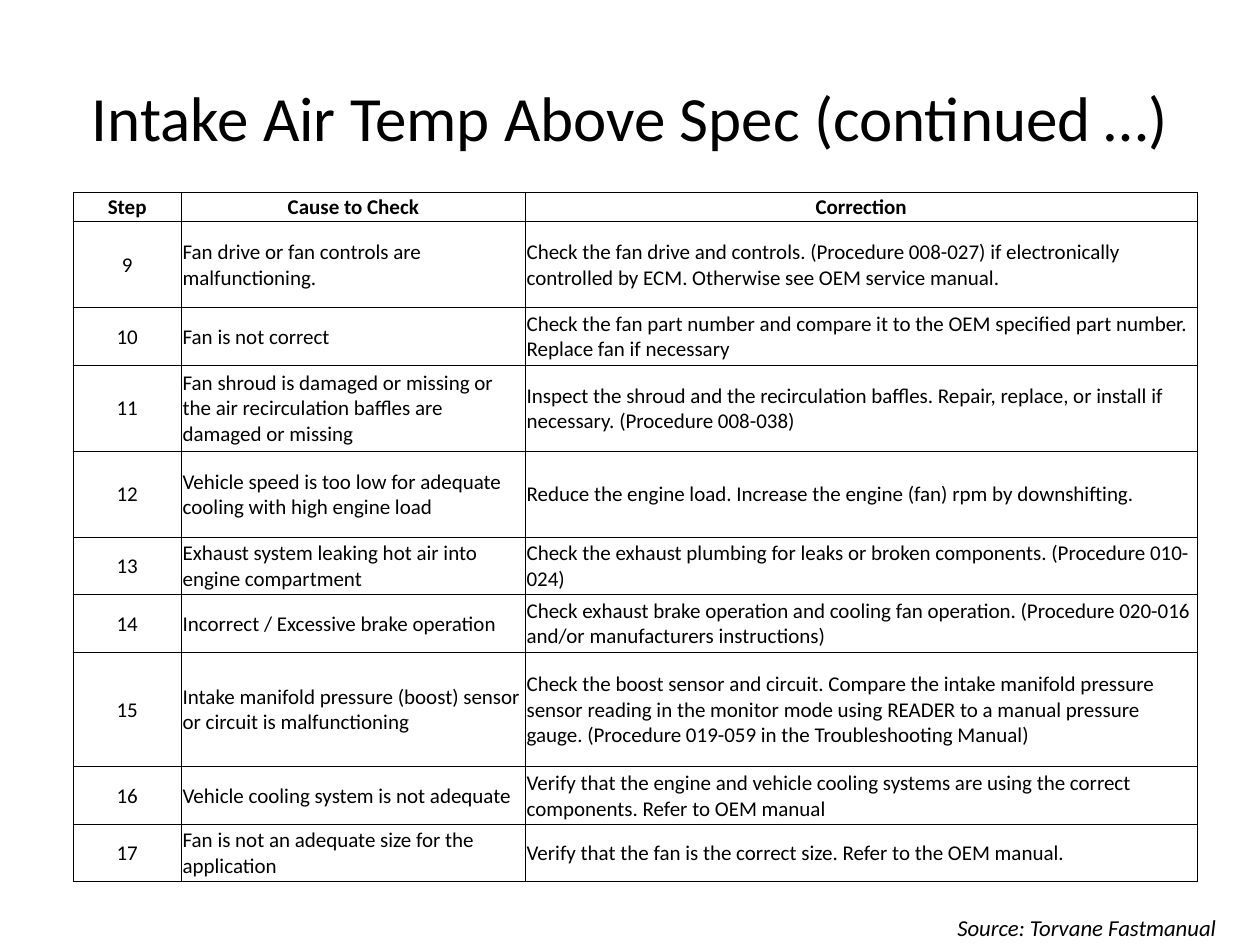
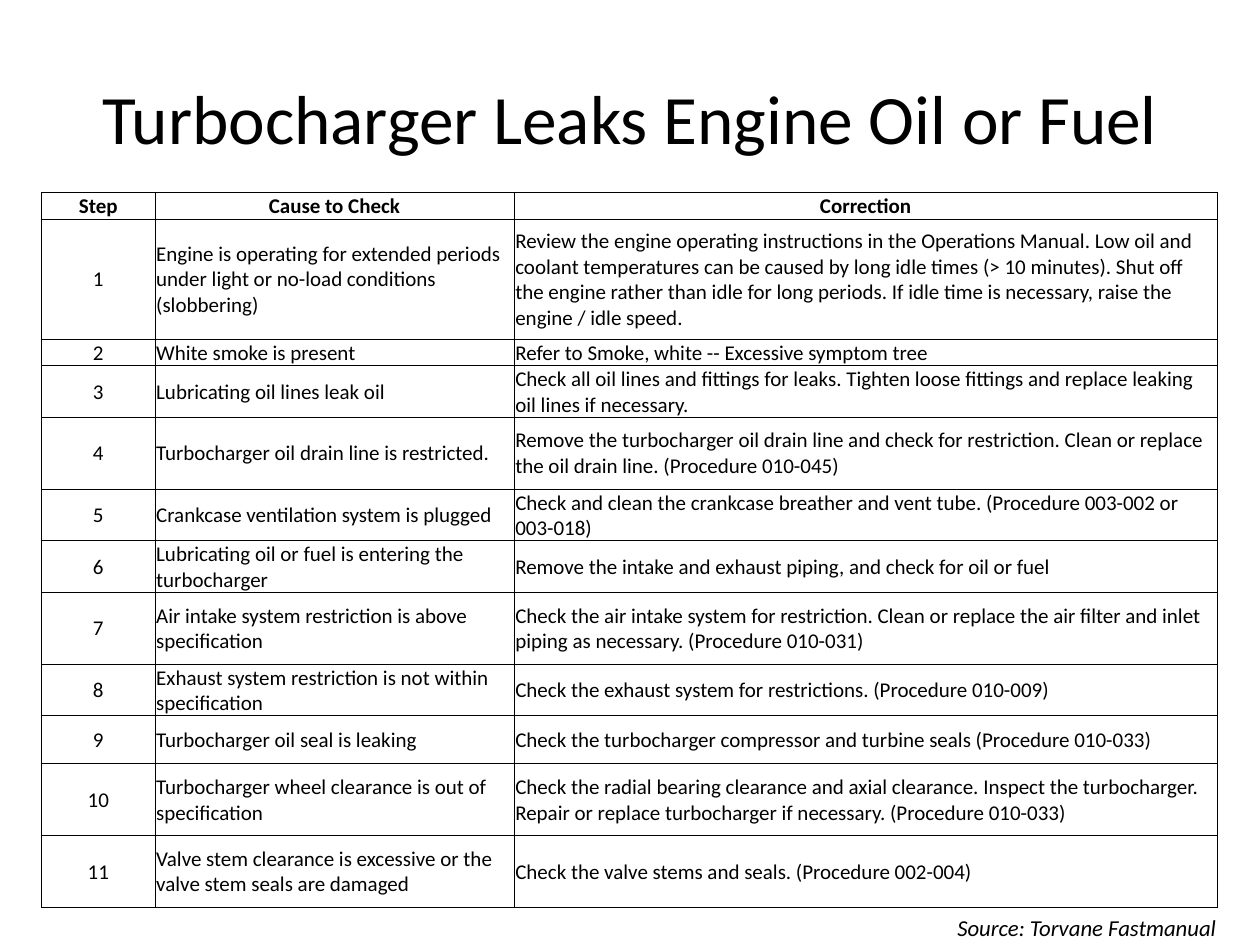
"""Build two engine troubleshooting slides, each with a step, cause and correction table."""
from lxml.etree import SubElement
from pptx import Presentation
from pptx.dml.color import RGBColor
from pptx.enum.text import MSO_ANCHOR as Anchor, MSO_AUTO_SIZE as AutoSize, PP_ALIGN as Align
from pptx.oxml.ns import qn
from pptx.util import Inches, Pt

BLACK = RGBColor(0, 0, 0)
WHITE = RGBColor(255, 255, 255)
FONT = "Calibri"
SOURCE = "Source: Torvane Fastmanual"
HEADER = ("Step", "Cause to Check", "Correction")

INTAKE_ROWS = [
    (3, "Fan drive or fan controls are malfunctioning.",
     "Check the fan drive and controls. (Procedure 008-027) if electronically "
     "controlled by ECM. Otherwise see OEM service manual."),
    (2, "Fan is not correct",
     "Check the fan part number and compare it to the OEM specified part number. "
     "Replace fan if necessary"),
    (3, "Fan shroud is damaged or missing or the air recirculation baffles are "
     "damaged or missing",
     "Inspect the shroud and the recirculation baffles. Repair, replace, or install "
     "if necessary. (Procedure 008-038)"),
    (3, "Vehicle speed is too low for adequate cooling with high engine load",
     "Reduce the engine load. Increase the engine (fan) rpm by downshifting."),
    (2, "Exhaust system leaking hot air into engine compartment",
     "Check the exhaust plumbing for leaks or broken components. (Procedure 010-024)"),
    (2, "Incorrect / Excessive brake operation",
     "Check exhaust brake operation and cooling fan operation. (Procedure 020-016 "
     "and/or manufacturers instructions)"),
    (4, "Intake manifold pressure (boost) sensor or circuit is malfunctioning",
     "Check the boost sensor and circuit. Compare the intake manifold pressure sensor "
     "reading in the monitor mode using READER to a manual pressure gauge. "
     "(Procedure 019-059 in the Troubleshooting Manual)"),
    (2, "Vehicle cooling system is not adequate",
     "Verify that the engine and vehicle cooling systems are using the correct "
     "components. Refer to OEM manual"),
    (2, "Fan is not an adequate size for the application",
     "Verify that the fan is the correct size. Refer to the OEM manual."),
]

TURBO_ROWS = [
    (5, "Engine is operating for extended periods under light or no-load conditions "
     "(slobbering)",
     "Review the engine operating instructions in the Operations Manual. Low oil and "
     "coolant temperatures can be caused by long idle times (> 10 minutes). Shut off "
     "the engine rather than idle for long periods. If idle time is necessary, raise "
     "the engine / idle speed."),
    (1, "White smoke is present", "Refer to Smoke, white -- Excessive symptom tree"),
    (2, "Lubricating oil lines leak oil",
     "Check all oil lines and fittings for leaks. Tighten loose fittings and replace "
     "leaking oil lines if necessary."),
    (3, "Turbocharger oil drain line is restricted.",
     "Remove the turbocharger oil drain line and check for restriction. Clean or "
     "replace the oil drain line. (Procedure 010-045)"),
    (2, "Crankcase ventilation system is plugged",
     "Check and clean the crankcase breather and vent tube. (Procedure 003-002 or "
     "003-018)"),
    (2, "Lubricating oil or fuel is entering the turbocharger",
     "Remove the intake and exhaust piping, and check for oil or fuel"),
    (3, "Air intake system restriction is above specification",
     "Check the air intake system for restriction. Clean or replace the air filter and "
     "inlet piping as necessary. (Procedure 010-031)"),
    (2, "Exhaust system restriction is not within specification",
     "Check the exhaust system for restrictions. (Procedure 010-009)"),
    (2, "Turbocharger oil seal is leaking",
     "Check the turbocharger compressor and turbine seals (Procedure 010-033)"),
    (3, "Turbocharger wheel clearance is out of specification",
     "Check the radial bearing clearance and axial clearance. Inspect the turbocharger. "
     "Repair or replace turbocharger if necessary. (Procedure 010-033)"),
    (3, "Valve stem clearance is excessive or the valve stem seals are damaged",
     "Check the valve stems and seals. (Procedure 002-004)"),
]


class SlideBuilder:
    def __init__(self, deck):
        self.deck = deck
        self.slide = None

    def new_slide(self):
        self.slide = self.deck.slides.add_slide(self.deck.slide_layouts[5])
        fill = self.slide.background.fill
        fill.solid()
        fill.fore_color.rgb = WHITE

    def set_text(self, frame, text, size, align=Align.LEFT, bold=False, italic=False):
        frame.text = text
        frame.word_wrap = True
        para = frame.paragraphs[0]
        para.alignment = align
        font = para.runs[0].font
        font.name, font.size, font.color.rgb = FONT, Pt(size), BLACK
        font.bold, font.italic = bold, italic

    def title(self, text, size):
        box = self.slide.shapes.title
        box.left, box.top, box.width, box.height = map(Inches, (0.5, 0.3, 9, 1.25))
        self.set_text(box.text_frame, text, size, Align.CENTER)
        box.text_frame.vertical_anchor = Anchor.MIDDLE

    def source(self):
        box = self.slide.shapes.add_textbox(*map(Inches, (7.5, 7.2, 2.5, 0.32)))
        self.set_text(box.text_frame, SOURCE, 13, italic=True)
        box.text_frame.auto_size = AutoSize.SHAPE_TO_FIT_TEXT

    def border(self, cell):
        properties = cell._tc.get_or_add_tcPr()
        for side in ("lnL", "lnR", "lnT", "lnB"):
            line = SubElement(properties, qn(f"a:{side}"), w=str(Pt(0.5)))
            SubElement(SubElement(line, qn("a:solidFill")), qn("a:srgbClr"), val=str(BLACK))

    def cell(self, cell, text, align, bold):
        cell.margin_left = cell.margin_right = cell.margin_top = Inches(0.01)
        cell.margin_bottom = 0
        cell.vertical_anchor = Anchor.MIDDLE
        self.border(cell)
        cell.fill.background()
        self.set_text(cell.text_frame, text, 12, align, bold)

    def steps(self, left, widths, line_height, first_step, entries):
        lines = [1] + [count for count, _, _ in entries]
        rows = [HEADER] + [(str(step), cause, correction) for step, (_, cause, correction)
                           in enumerate(entries, first_step)]
        table = self.slide.shapes.add_table(
            len(rows), len(HEADER), Inches(left), Inches(1.53),
            Inches(sum(widths)), Inches(line_height * sum(lines))).table
        table.first_row = table.horz_banding = False
        for column, width in zip(table.columns, widths):
            column.width = Inches(width)
        for row_index, texts in enumerate(rows):
            table.rows[row_index].height = Inches(line_height * lines[row_index])
            is_header = row_index == 0
            for column_index, text in enumerate(texts):
                centred = is_header or column_index == 0
                self.cell(table.cell(row_index, column_index), text,
                          Align.CENTER if centred else Align.LEFT, is_header)


def main():
    deck = Presentation()
    deck.slide_width, deck.slide_height = Inches(10), Inches(7.5)
    builder = SlideBuilder(deck)

    builder.new_slide()
    builder.title("Intake Air Temp Above Spec (continued …)", 36)
    builder.source()
    builder.steps(0.58, (0.86, 2.73, 5.33), 5.47 / 24, 9, INTAKE_ROWS)

    builder.new_slide()
    builder.title("Turbocharger Leaks Engine Oil or Fuel", 39.6)
    builder.source()
    builder.steps(0.33, (0.9, 2.85, 5.58), 0.19, 1, TURBO_ROWS)

    deck.save("out.pptx")


if __name__ == "__main__":
    main()
